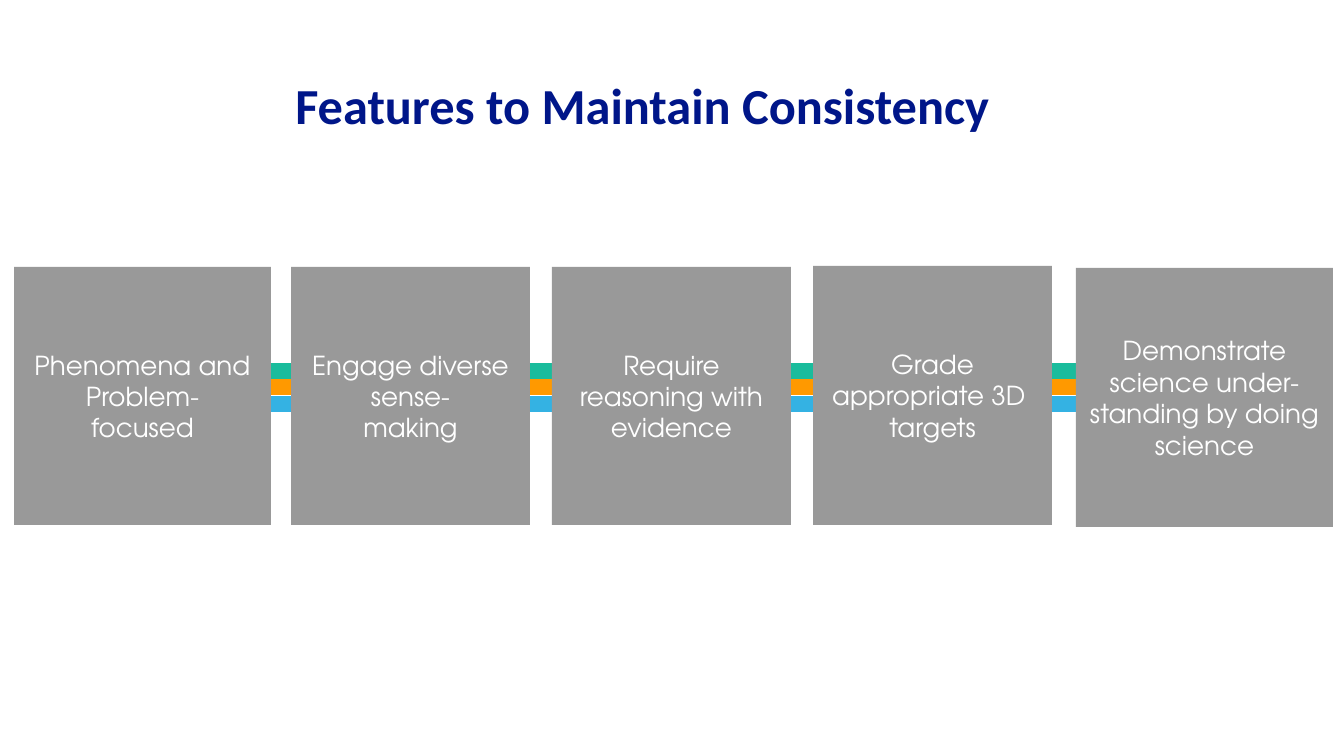
"""Build the slide of five linked features that maintain consistency."""
import pptx
import pptx.dml.color
import pptx.enum.shapes
import pptx.enum.text
import pptx.oxml.ns
import pptx.util
from lxml import etree

PX_PER_INCH = 134.4
NAVY = pptx.dml.color.RGBColor(0x00, 0x16, 0x89)
GRAY = pptx.dml.color.RGBColor(0x99, 0x99, 0x99)
WHITE = pptx.dml.color.RGBColor(0xFF, 0xFF, 0xFF)
ORANGE = pptx.dml.color.RGBColor(0xFF, 0x99, 0x00)
BLUE = pptx.dml.color.RGBColor(0x34, 0xB2, 0xE3)
GREEN = pptx.dml.color.RGBColor(0x1A, 0xBC, 0x9C)

BAND_LENGTH = 1177
BANDS = [(113, 387, ORANGE), (90, 404, BLUE), (69, 371, GREEN)]
FEATURES = [
    (14, 267, 257, 258, ["Phenomena and Problem-", "focused"]),
    (291, 267, 239, 258, ["Engage diverse sense-", "making"]),
    (552, 267, 239, 258, ["Require reasoning with evidence"]),
    (813, 266, 239, 259, ["Grade", "appropriate 3D ", "targets"]),
    (1076, 268, 257, 259, ["Demonstrate science under-", "standing by doing science"]),
]


def px(length):
    """Turn whole pixels into EMU."""
    return pptx.util.Inches(length / PX_PER_INCH)


def set_frame(frame, anchor, inset_x, inset_y):
    """Set wrapping, anchor and insets of a text frame."""
    frame.word_wrap = True
    frame.vertical_anchor = anchor
    frame.margin_left = frame.margin_right = px(inset_x)
    frame.margin_top = frame.margin_bottom = px(inset_y)


def style_paragraph(paragraph, font_name, size, color):
    """Centre a paragraph and set its font."""
    paragraph.alignment = pptx.enum.text.PP_ALIGN.CENTER
    paragraph.font.name = font_name
    paragraph.font.size = pptx.util.Pt(size)
    paragraph.font.color.rgb = color


def add_title(slide, text):
    """Add the slide heading."""
    title = slide.shapes.add_textbox(px(-138), px(0), px(1572), px(144))
    set_frame(title.text_frame, pptx.enum.text.MSO_ANCHOR.BOTTOM, 9, 9)
    heading = title.text_frame.paragraphs[0]
    heading.text = text
    heading.line_spacing = 0.9
    style_paragraph(heading, "Calibri", 27, NAVY)
    heading.font.bold = True


def add_band(slide, left, y, color):
    """Add one horizontal coloured band behind the features."""
    band = slide.shapes.add_connector(
        pptx.enum.shapes.MSO_CONNECTOR.STRAIGHT,
        px(left), px(y), px(left + BAND_LENGTH), px(y))
    band.line.color.rgb = color
    band.line.width = pptx.util.Pt(9)
    properties = band._element.spPr
    etree.SubElement(properties, pptx.oxml.ns.qn("a:effectLst"))


def add_feature(slide, left, top, width, height, lines):
    """Add one gray feature box with centred text."""
    feature = slide.shapes.add_shape(
        pptx.enum.shapes.MSO_SHAPE.RECTANGLE,
        px(left), px(top), px(width), px(height))
    feature.shadow.inherit = False
    feature.fill.solid()
    feature.fill.fore_color.rgb = GRAY
    feature.line.fill.background()
    set_frame(feature.text_frame, pptx.enum.text.MSO_ANCHOR.MIDDLE, 8, 4)
    feature.text_frame.text = "\n".join(lines)
    for paragraph in feature.text_frame.paragraphs:
        style_paragraph(paragraph, "TeX Gyre Adventor", 14, WHITE)


def main():
    """Build and save the slide."""
    presentation = pptx.Presentation()
    presentation.slide_width = px(1344)
    presentation.slide_height = px(756)
    slide = presentation.slides.add_slide(presentation.slide_layouts[6])
    add_title(slide, "Features to Maintain Consistency ")
    for band in BANDS:
        add_band(slide, *band)
    for feature in FEATURES:
        add_feature(slide, *feature)
    presentation.save("out.pptx")


if __name__ == "__main__":
    main()
